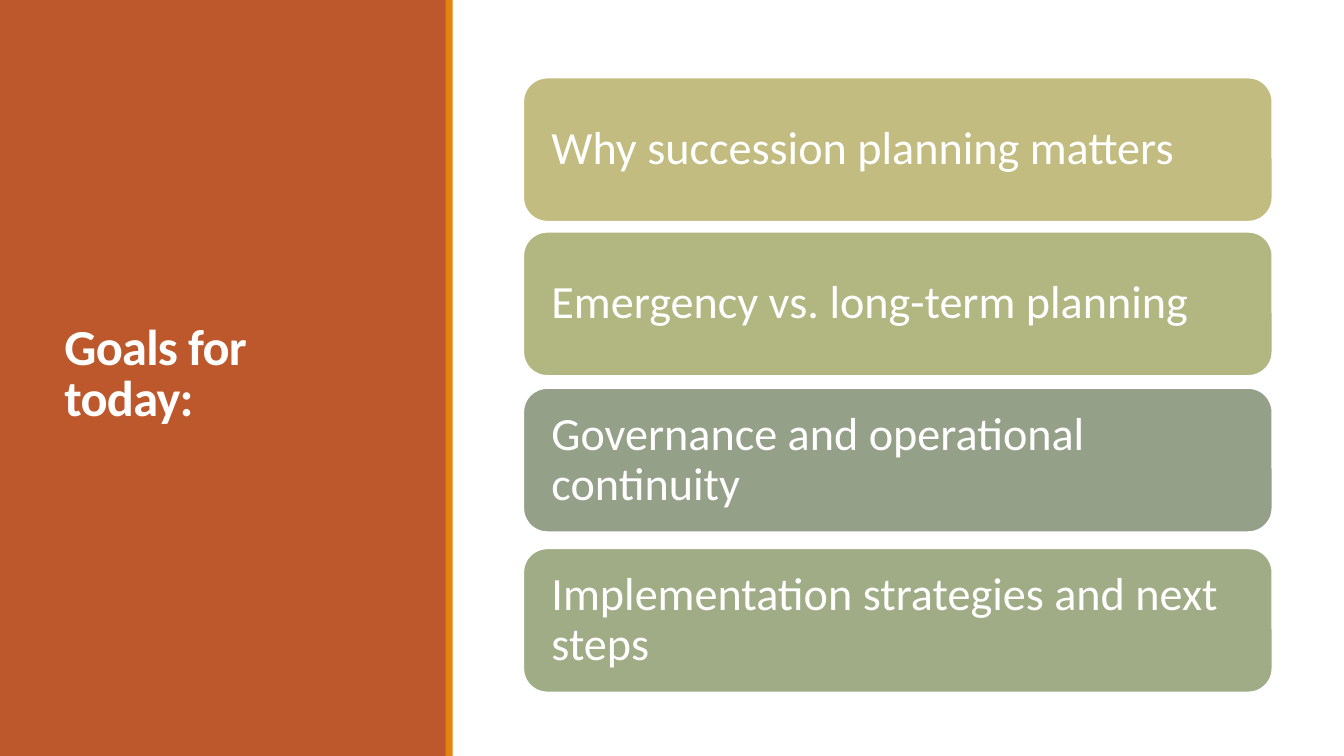
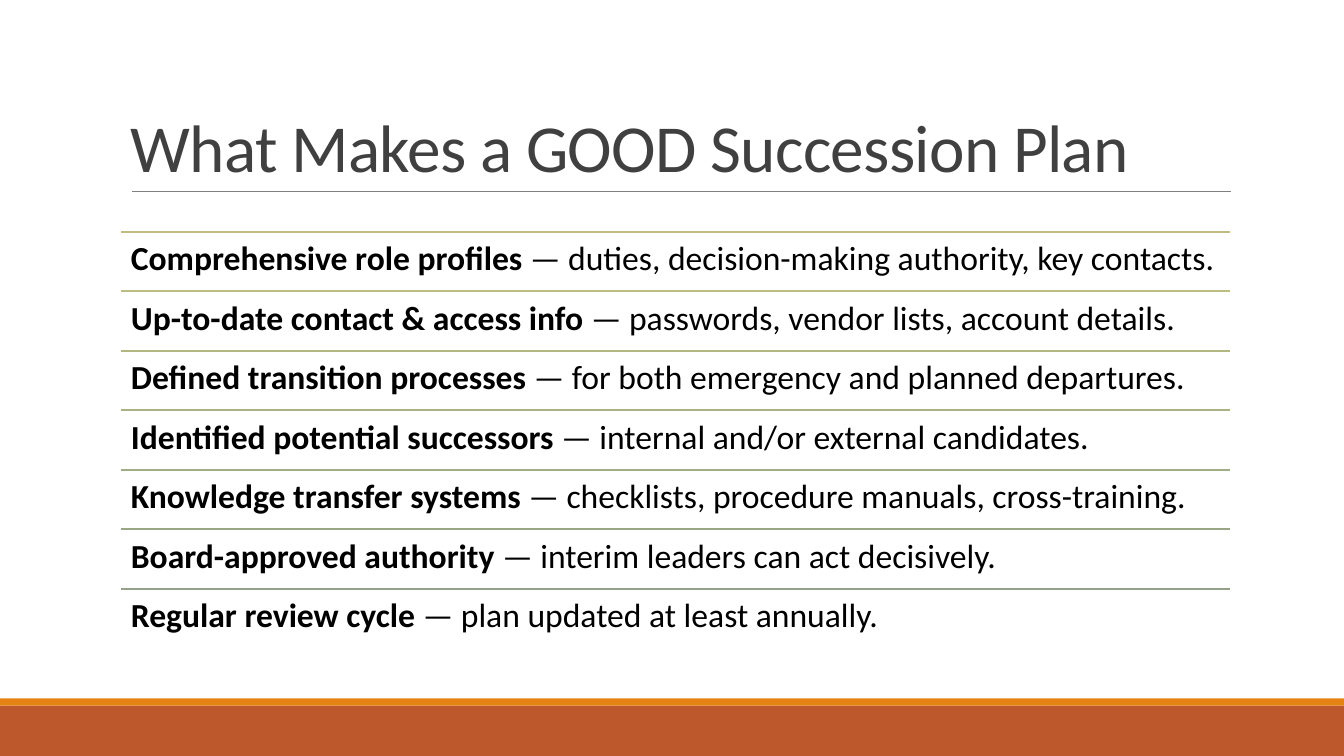
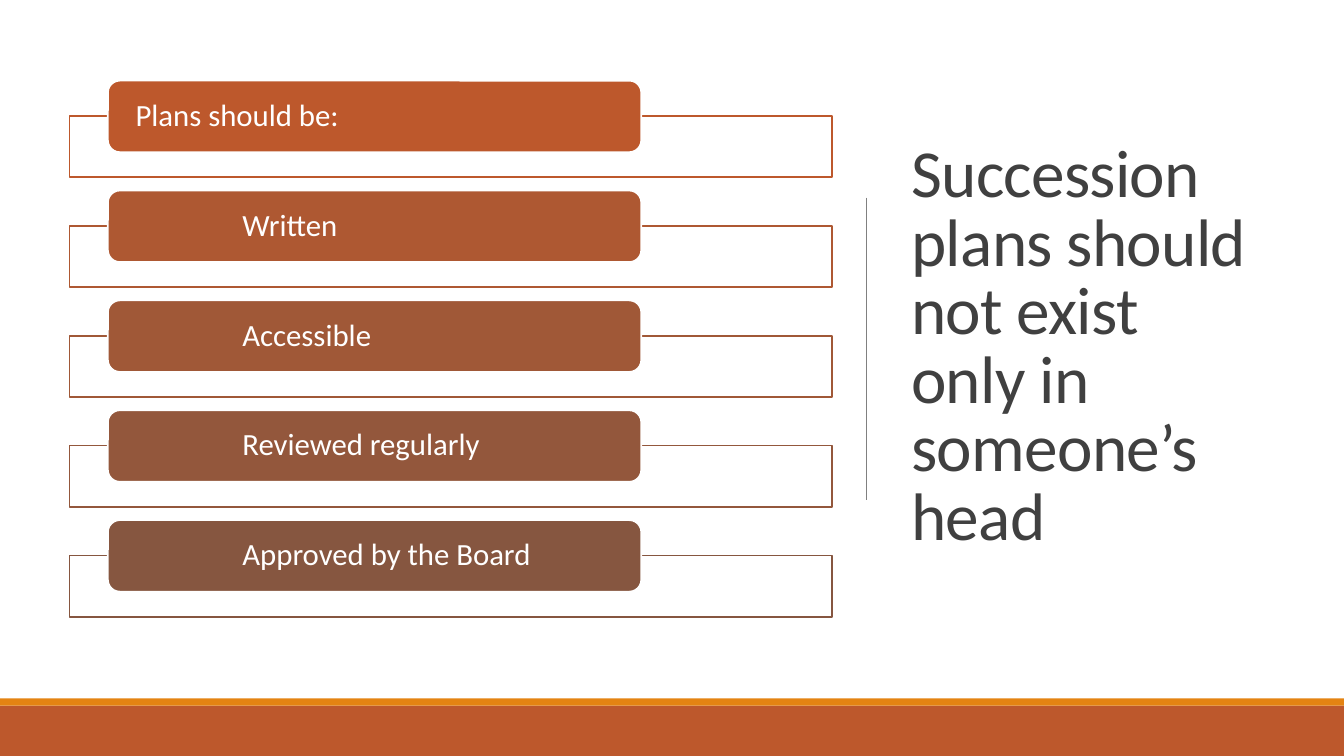
import pptx
import pptx.util
import pptx.dml.color
import pptx.enum.shapes
import pptx.enum.text
import pptx.oxml

Inches = pptx.util.Inches
Pt = pptx.util.Pt
SHAPES = pptx.enum.shapes.MSO_SHAPE
ANCHOR = pptx.enum.text.MSO_ANCHOR

THEME = {
    "font": "Calibri",
    "rust": "BD582C", "orange": "E48312", "white": "FFFFFF",
    "title": "404040", "body": "000000", "rule": "808080",
    "title_size": 48, "side_title_size": 36,
    "goal_size": 33, "feature_size": 24, "quality_size": 22,
    "outline": 1.25, "hairline": 0.5,
}
SLIDE_WIDTH, SLIDE_HEIGHT = 13.33, 7.5

GOALS_TITLE = "Goals for today:"
GOALS = [
    ("Why succession planning matters", "C2BC80", 0.77),
    ("Emergency vs. long-term planning", "B2B782", 2.3),
    ("Governance and operational continuity", "94A088", 3.85),
    ("Implementation strategies and next steps", "A0AC85", 5.44),
]

FEATURES_TITLE = "What Makes a GOOD Succession Plan"
FEATURES = [
    ("Comprehensive role profiles", "duties, decision-making authority, key contacts.", "C2BC80"),
    ("Up-to-date contact & access info", "passwords, vendor lists, account details.", "BCBD81"),
    ("Defined transition processes", "for both emergency and planned departures.", "B2B782"),
    ("Identified potential successors", "internal and/or external candidates.", "A8B283"),
    ("Knowledge transfer systems", "checklists, procedure manuals, cross-training.", "A0AC85"),
    ("Board-approved authority", "interim leaders can act decisively.", "99A686"),
    ("Regular review cycle", "plan updated at least annually.", "94A088"),
]

QUALITIES_TITLE = "Succession plans should not exist only in someone’s head"
QUALITIES = [
    ("Plans should be:", "BD582C", 0),
    ("Written", "AE5832", 1.06),
    ("Accessible", "A05837", 1.06),
    ("Reviewed regularly", "93573C", 1.06),
    ("Approved by the Board", "865640", 1.06),
]


def rgb(code):
    return pptx.dml.color.RGBColor.from_string(code)


def apply(target, values):
    for name, value in values.items():
        setattr(target, name, value)


def write(shape, runs, size, color, anchor, insets=(0.1, 0.05), spacing=0.9, tracking=0, indent=0):
    side, edge = (Inches(inset) for inset in insets)
    frame = shape.text_frame
    apply(frame, {
        "word_wrap": True, "vertical_anchor": anchor,
        "margin_left": side, "margin_right": side,
        "margin_top": edge, "margin_bottom": edge,
    })
    paragraph = frame.paragraphs[0]
    apply(paragraph, {"alignment": pptx.enum.text.PP_ALIGN.LEFT, "line_spacing": spacing})
    if indent:
        properties = paragraph._p.get_or_add_pPr()
        properties.set("marL", str(Inches(indent)))
        properties.set("indent", "0")
    for words, bold in runs:
        run = paragraph.add_run()
        run.text = words
        apply(run.font, {"name": THEME["font"], "size": Pt(size), "bold": bold})
        run.font.color.rgb = rgb(color)
        if tracking:
            run._r.get_or_add_rPr().set("spc", str(tracking))


def add_text(slide, place, runs, size, color, anchor, **options):
    box = slide.shapes.add_textbox(*map(Inches, place))
    write(box, runs, size, color, anchor, **options)


def add_title(slide, place, words, anchor, size=THEME["title_size"], color=THEME["title"], bold=False):
    add_text(slide, place, [(words, bold)], size, color, anchor, spacing=0.85, tracking=-50)


def add_block(slide, kind, place, fill, line=None):
    block = slide.shapes.add_shape(kind, *map(Inches, place))
    block.shadow.inherit = False
    block.fill.solid()
    block.fill.fore_color.rgb = rgb(fill)
    if line:
        block.line.color.rgb = rgb(line)
        block.line.width = Pt(THEME["outline"])
    else:
        block.line.fill.background()
    return block


def add_rule(slide, start, end, color, width):
    rule = slide.shapes.add_connector(
        pptx.enum.shapes.MSO_CONNECTOR.STRAIGHT, *map(Inches, start + end))
    rule.line.color.rgb = rgb(color)
    rule.line.width = Pt(width)
    rule._element.spPr.append(pptx.oxml.parse_xml(
        '<a:effectLst xmlns:a="http://schemas.openxmlformats.org/drawingml/2006/main"/>'))


def add_footer_bands(slide):
    for top, height, color in ((7, 0.5, "rust"), (6.93, 0.07, "orange")):
        add_block(slide, SHAPES.RECTANGLE, (0, top, SLIDE_WIDTH, height), THEME[color])


def build_goals(slide):
    add_block(slide, SHAPES.RECTANGLE, (0, 0, 4.43, SLIDE_HEIGHT), THEME["rust"])
    add_title(slide, (0.54, 0.57, 3.37, 6.31), GOALS_TITLE, ANCHOR.MIDDLE,
              THEME["side_title_size"], THEME["white"], True)
    add_block(slide, SHAPES.RECTANGLE, (4.42, 0, 0.07, SLIDE_HEIGHT), THEME["orange"])
    for goal, color, top in GOALS:
        card = add_block(slide, SHAPES.ROUNDED_RECTANGLE, (5.19, top, 7.43, 1.43),
                         color, THEME["white"])
        write(card, [(goal, False)], THEME["goal_size"], THEME["white"],
              ANCHOR.MIDDLE, insets=(0.21, 0.21))


def build_features(slide):
    left, top, width, row_height = 1.2, 2.3, 11, 0.59
    add_footer_bands(slide)
    add_rule(slide, (1.31, 1.9), (12.21, 1.9), THEME["rule"], THEME["hairline"])
    add_title(slide, (left, 0.31, width, 1.59), FEATURES_TITLE, ANCHOR.BOTTOM)
    for row, (feature, detail, color) in enumerate(FEATURES):
        row_top = top + row * row_height
        add_rule(slide, (left, row_top), (left + width, row_top), color, THEME["outline"])
        add_text(slide, (left, row_top, width, row_height),
                 [(feature, True), (f" — {detail}", False)],
                 THEME["feature_size"], THEME["body"], ANCHOR.TOP, insets=(0.1, 0.1))


def build_qualities(slide):
    top, step, frame_drop = 0.8, 1.09, 0.35
    add_title(slide, (8.94, 0.69, 3.69, 5.53), QUALITIES_TITLE, ANCHOR.MIDDLE)
    add_rule(slide, (8.59, 1.96), (8.59, 4.96), THEME["rule"], THEME["hairline"])
    add_footer_bands(slide)
    for row, (quality, color, indent) in enumerate(QUALITIES):
        label_top = top + row * step
        add_block(slide, SHAPES.RECTANGLE, (0.69, label_top + frame_drop, 7.56, 0.61),
                  THEME["white"], color)
        label = add_block(slide, SHAPES.ROUNDED_RECTANGLE, (1.07, label_top, 5.29, 0.71),
                          color, THEME["white"])
        write(label, [(quality, False)], THEME["quality_size"], THEME["white"],
              ANCHOR.MIDDLE, insets=(0.24, 0.03), indent=indent)


def main():
    deck = pptx.Presentation()
    apply(deck, {"slide_width": Inches(SLIDE_WIDTH), "slide_height": Inches(SLIDE_HEIGHT)})
    for build in (build_goals, build_features, build_qualities):
        build(deck.slides.add_slide(deck.slide_layouts[6]))
    deck.save("out.pptx")


if __name__ == "__main__":
    main()
